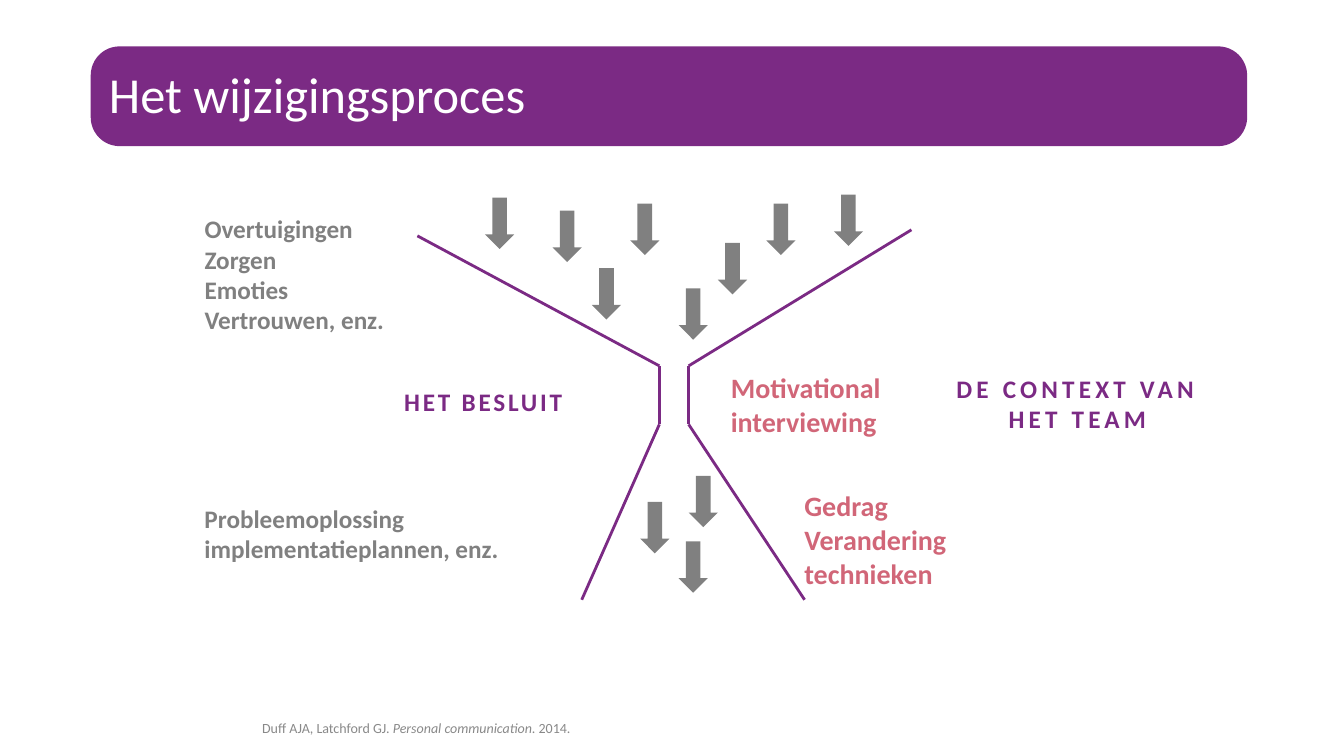
from itertools import pairwise

from pptx import Presentation
from pptx.dml.color import RGBColor
from pptx.enum.shapes import MSO_CONNECTOR, MSO_SHAPE
from pptx.enum.text import MSO_ANCHOR, PP_ALIGN
from pptx.oxml.ns import qn
from pptx.util import Pt

EMU_PER_PX = 9144
PURPLE, PINK, GREY, PALE_GREY, WHITE = "7B2A84", "D16678", "808080", "898989", "FFFFFF"

LEFT_WALL = [(0, 41), (240, 170), (240, 228), (163, 402)]
RIGHT_WALL = [(490, 35), (269, 170), (269, 228), (384, 402)]
ARROWS = [(67, 3), (134, 16), (173, 73), (211, 9), (259, 93), (346, 9),
          (298, 48), (413, 0), (221, 305), (259, 344), (269, 279)]
ARROW_SIZE = (29, 51)

LABELS = [
    ((522, 170, 200, 77), ["Motivational interviewing"], {"size": 20, "color": PINK}),
    ((198, 185, 241, 40), ["HET BESLUIT"], {"color": PURPLE, "tracking": 2}),
    ((595, 287, 297, 110), ["Gedrag", "Verandering", "technieken"], {"size": 20, "color": PINK}),
    ((0, 301, 316, 70), ["Probleemoplossing", "implementatieplannen, enz."], {}),
    ((0, 14, 318, 130), ["Overtuigingen", "Zorgen", "Emoties", "Vertrouwen, enz."], {}),
    ((740, 172, 271, 70), ["DE CONTEXT VAN HET TEAM"],
     {"color": PURPLE, "tracking": 3, "align": PP_ALIGN.CENTER}),
]


def px(*lengths):
    """Turn pixel lengths into EMU."""
    return [length * EMU_PER_PX for length in lengths]


def rgb(color):
    """Turn a hex string into a colour."""
    return RGBColor.from_string(color)


def add_text(page, box, paragraphs, size=18, color=GREY, bold=False, tracking=0,
             align=PP_ALIGN.LEFT, anchor=MSO_ANCHOR.TOP, spacing=1.0, inset=True):
    """Add a text box; a paragraph is a string or a list of (text, italic) spans."""
    frame = page.shapes.add_textbox(*px(*box)).text_frame
    frame.word_wrap = True
    frame.vertical_anchor = anchor
    if not inset:
        frame.margin_left = frame.margin_right = frame.margin_top = frame.margin_bottom = 0
    for index, content in enumerate(paragraphs):
        para = frame.paragraphs[0] if index == 0 else frame.add_paragraph()
        para.alignment = align
        para.line_spacing = spacing
        spans = [(content, False)] if isinstance(content, str) else content
        for text, italic in spans:
            span = para.add_run()
            span.text = text
            font = span.font
            font.name, font.size, font.bold, font.italic = "Calibri", Pt(size), bold, italic
            font.color.rgb = rgb(color)
            if tracking:
                span._r.get_or_add_rPr().set("spc", str(tracking * 100))


def add_solid(page, kind, box, color):
    """Add a preset shape with a flat fill and no outline."""
    shape = page.shapes.add_shape(kind, *px(*box))
    shape.shadow.inherit = False
    shape.fill.solid()
    shape.fill.fore_color.rgb = rgb(color)
    shape.line.fill.background()
    return shape


def add_line(page, start, end):
    """Add a straight purple line."""
    line = page.shapes.add_connector(MSO_CONNECTOR.STRAIGHT, *px(*start, *end))
    line.line.color.rgb = rgb(PURPLE)
    line.line.width = Pt(2)
    properties = line._element.spPr
    properties.append(properties.makeelement(qn("a:effectLst"), {}))


def add_title(page, box, text):
    """Draw the rounded title banner and its text."""
    left, top, width, height = box
    banner = add_solid(page, MSO_SHAPE.ROUNDED_RECTANGLE, box, PURPLE)
    banner.adjustments[0] = 0.29
    add_text(page, (left + 18, top + 16, width - 29, height - 27), [text], size=36,
             color=WHITE, anchor=MSO_ANCHOR.MIDDLE, spacing=0.8, inset=False)


def add_funnel(page, box):
    """Draw the funnel walls and the arrows that fall through it."""
    left, top = box[:2]
    for wall in (LEFT_WALL, RIGHT_WALL):
        points = [(left + x, top + y) for x, y in wall]
        for start, end in pairwise(points):
            add_line(page, start, end)
    for x, y in ARROWS:
        add_solid(page, MSO_SHAPE.DOWN_ARROW, (left + x, top + y, *ARROW_SIZE), GREY)


def add_labels(page, box):
    """Place the bold labels around the funnel."""
    left, top = box[:2]
    for (x, y, width, height), paragraphs, style in LABELS:
        add_text(page, (left + x, top + y, width, height), paragraphs, bold=True, **style)


def add_reference(page, box):
    """Place the reference at the foot of the page."""
    spans = [("Duff AJA, Latchford GJ. ", False), ("Personal communication", True),
             (". 2014.", False)]
    add_text(page, box, [spans], size=10, color=PALE_GREY, anchor=MSO_ANCHOR.BOTTOM,
             spacing=0.9, inset=False)


def main():
    """Build the deck and save it."""
    deck = Presentation()
    deck.slide_width, deck.slide_height = px(1333, 750)
    page = deck.slides.add_slide(deck.slide_layouts[6])
    add_title(page, (90, 46, 1147, 99), "Het wijzigingsproces")
    add_reference(page, (260, 646, 982, 85))
    add_funnel(page, (414, 193, 490, 402))
    add_labels(page, (193, 193, 1011, 402))
    deck.save("out.pptx")


if __name__ == "__main__":
    main()
